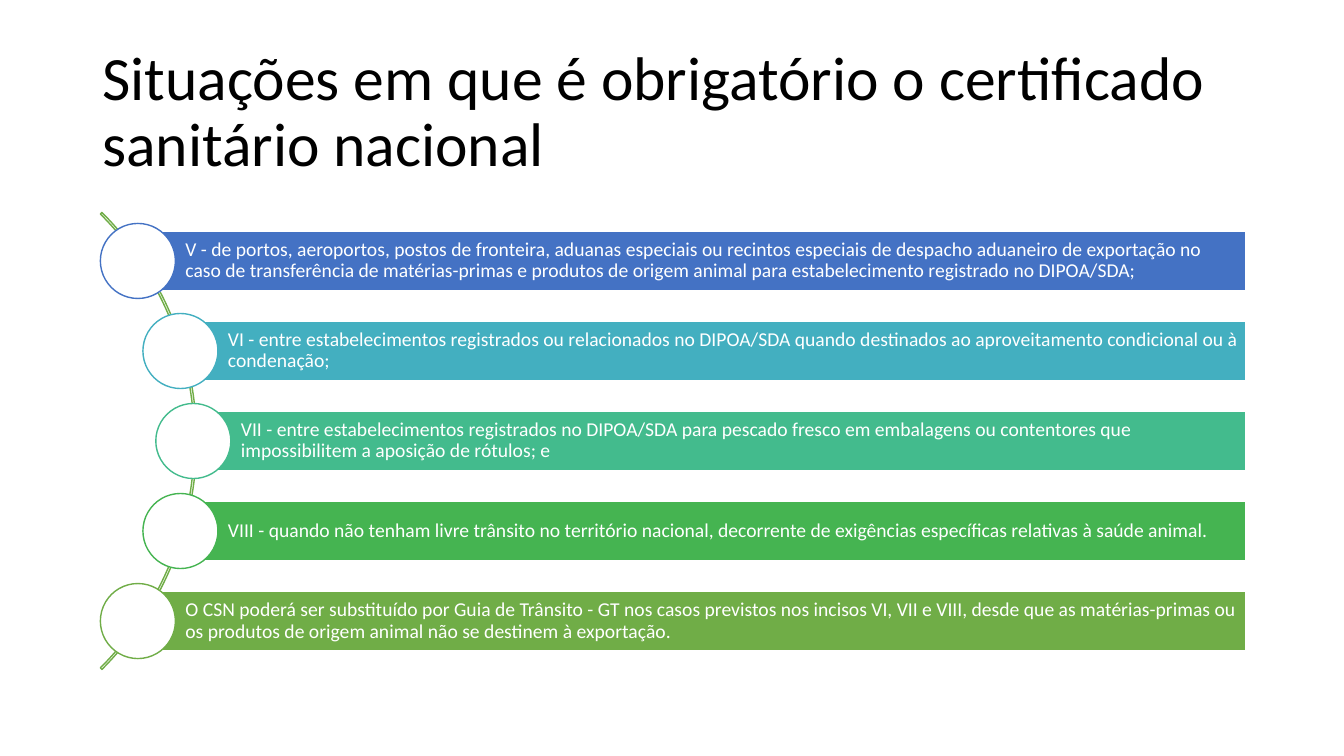
import math

import pptx
import pptx.dml.color
import pptx.enum.shapes
import pptx.enum.text
import pptx.util

Pt = pptx.util.Pt
SHAPE = pptx.enum.shapes.MSO_SHAPE

COLORS = {
    "black": "000000",
    "white": "FFFFFF",
    "blue": "4472C4",
    "cyan": "43AFC0",
    "teal": "43BB8D",
    "green": "45B451",
    "olive": "70AD47",
}


class SlideBuilder:
    """Holds the style and the current slide; lengths are in points."""

    font = "Calibri"
    line_spacing = 0.9
    line_width = 1

    def __init__(self, slide):
        self.slide = slide

    def color(self, name):
        return pptx.dml.color.RGBColor.from_string(COLORS[name])

    def shape(self, kind, left, top, width, height, line, fill=None):
        shape = self.slide.shapes.add_shape(
            kind, Pt(left), Pt(top), Pt(width), Pt(height))
        shape.shadow.inherit = False
        if fill:
            shape.fill.solid()
            shape.fill.fore_color.rgb = self.color(fill)
        else:
            shape.fill.background()
        shape.line.color.rgb = self.color(line)
        shape.line.width = Pt(self.line_width)
        return shape

    def set_text(self, shape, text, size, color, insets):
        frame = shape.text_frame
        frame.word_wrap = True
        frame.vertical_anchor = pptx.enum.text.MSO_ANCHOR.MIDDLE
        (frame.margin_left, frame.margin_top,
         frame.margin_right, frame.margin_bottom) = map(Pt, insets)
        paragraph = frame.paragraphs[0]
        paragraph.text = text
        paragraph.alignment = pptx.enum.text.PP_ALIGN.LEFT
        paragraph.line_spacing = self.line_spacing
        paragraph.font.name = self.font
        paragraph.font.size = Pt(size)
        paragraph.font.color.rgb = self.color(color)

    def title(self, text, left, top, width, height):
        box = self.slide.shapes.add_textbox(
            Pt(left), Pt(top), Pt(width), Pt(height))
        self.set_text(box, text, 44, "black", (7.2, 3.6, 7.2, 3.6))

    def arc(self, center_x, center_y, radius, color):
        arc = self.shape(SHAPE.BLOCK_ARC, center_x - radius, center_y - radius,
                         2 * radius, 2 * radius, color)
        # Start and end angles (315° and 45°), then the band's thickness
        for index, value in enumerate((189, 27, 0.0034)):
            arc.adjustments[index] = value

    def bar(self, text, left, center_y, right, height, color):
        bar = self.shape(SHAPE.RECTANGLE, left, center_y - height / 2,
                         right - left, height, "white", color)
        self.set_text(bar, text, 14, "white", (34, 2.8, 2.8, 2.8))

    def circle(self, center_x, center_y, diameter, color):
        self.shape(SHAPE.OVAL, center_x - diameter / 2, center_y - diameter / 2,
                   diameter, diameter, color, "white")


SITUATIONS = [
    ("blue", "V - de portos, aeroportos, postos de fronteira, aduanas especiais "
     "ou recintos especiais de despacho aduaneiro de exportação no caso de "
     "transferência de matérias-primas e produtos de origem animal para "
     "estabelecimento registrado no DIPOA/SDA;"),
    ("cyan", "VI - entre estabelecimentos registrados ou relacionados no "
     "DIPOA/SDA quando destinados ao aproveitamento condicional ou à "
     "condenação;"),
    ("teal", "VII - entre estabelecimentos registrados no DIPOA/SDA para pescado "
     "fresco em embalagens ou contentores que impossibilitem a aposição de "
     "rótulos; e"),
    ("green", "VIII - quando não tenham livre trânsito no território nacional, "
     "decorrente de exigências específicas relativas à saúde animal."),
    ("olive", "O CSN poderá ser substituído por Guia de Trânsito - GT nos casos "
     "previstos nos incisos VI, VII e VIII, desde que as matérias-primas ou os "
     "produtos de origem animal não se destinem à exportação."),
]

ARC_X, ARC_Y, ARC_RADIUS = -90.4, 315, 230.8
CIRCLE_RADIUS_FROM_ARC = 228.5  # circle centres lie just inside the arc
ROW_STEP = 64.3
BAR_RIGHT, BAR_HEIGHT, CIRCLE_DIAMETER = 889.5, 42.9, 53.6


def main():
    presentation = pptx.Presentation()
    presentation.slide_width = Pt(960)
    presentation.slide_height = Pt(540)
    builder = SlideBuilder(
        presentation.slides.add_slide(presentation.slide_layouts[6]))

    # Title
    builder.title("Situações em que é obrigatório o certificado sanitário "
                  "nacional", 66, 28.75, 828, 104.4)

    # Curve behind the list
    builder.arc(ARC_X, ARC_Y, ARC_RADIUS, "olive")

    # Situations, spaced evenly and following the curve
    for row, (color, text) in enumerate(SITUATIONS):
        offset = (row - (len(SITUATIONS) - 1) / 2) * ROW_STEP
        center_x = ARC_X + math.sqrt(CIRCLE_RADIUS_FROM_ARC ** 2 - offset ** 2)
        center_y = ARC_Y + offset
        builder.bar(text, center_x, center_y, BAR_RIGHT, BAR_HEIGHT, color)
        builder.circle(center_x, center_y, CIRCLE_DIAMETER, color)

    presentation.save("out.pptx")


if __name__ == "__main__":
    main()
